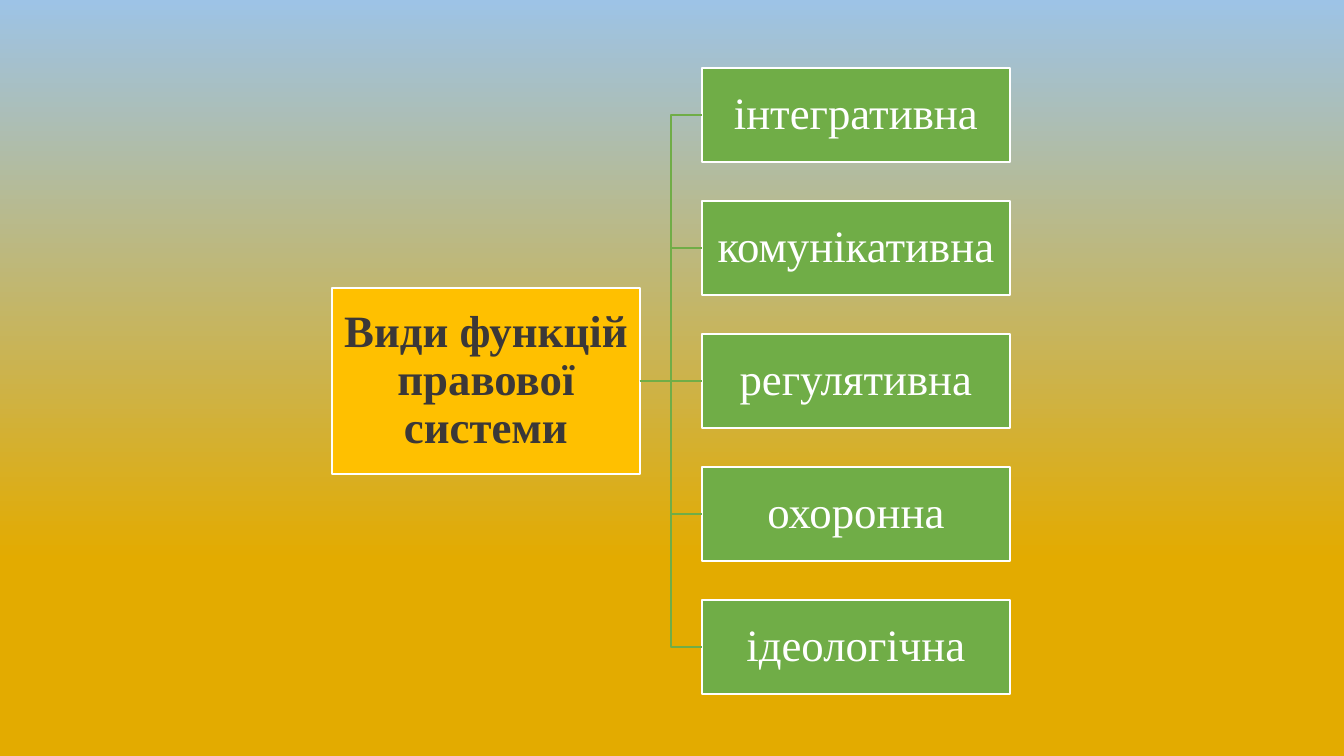
from lxml import etree
from pptx import Presentation
from pptx.dml.color import RGBColor
from pptx.enum.shapes import MSO_CONNECTOR, MSO_SHAPE
from pptx.enum.text import MSO_ANCHOR, PP_ALIGN
from pptx.oxml.ns import qn
from pptx.util import Pt

RECT = MSO_SHAPE.RECTANGLE
ELBOW, STRAIGHT = MSO_CONNECTOR.ELBOW, MSO_CONNECTOR.STRAIGHT
MIDDLE, CENTER = MSO_ANCHOR.MIDDLE, PP_ALIGN.CENTER
LEFT_SIDE, RIGHT_SIDE = 1, 3

WHITE = RGBColor(0xFF, 0xFF, 0xFF)
DARK = RGBColor(0x3B, 0x38, 0x38)
AMBER = RGBColor(0xFF, 0xC0, 0x00)
GREEN = RGBColor(0x70, 0xAD, 0x47)
GOLD = RGBColor(0xE3, 0xAB, 0x00)
SKY = RGBColor(0x9D, 0xC3, 0xE6)

ROOT = "Види функцій правової системи"
FUNCTIONS = ["інтегративна", "комунікативна", "регулятивна", "охоронна", "ідеологічна"]


def px(n):
    return round(n * 914400 / 100.8)


class Diagram:
    font = {"name": "Times New Roman", "size": Pt(32)}
    frame = {"word_wrap": True, "vertical_anchor": MIDDLE,
             "margin_left": px(2), "margin_right": px(2),
             "margin_top": px(2), "margin_bottom": px(2)}
    line_width = Pt(1)

    def __init__(self, slide):
        self.s = slide

    def background(self, stops, angle):
        fill = self.s.background.fill
        fill.gradient()
        fill.gradient_angle = angle
        for stop, (position, color) in zip(fill.gradient_stops, stops):
            stop.position = position
            stop.color.rgb = color

    def box(self, x, y, w, h, text, fill, color, bold=False):
        sp = self.s.shapes.add_shape(RECT, px(x), px(y), px(w), px(h))
        sp.shadow.inherit = False
        sp.fill.solid()
        sp.fill.fore_color.rgb = fill
        sp.line.color.rgb = WHITE
        sp.line.width = self.line_width
        tf = sp.text_frame
        for name, value in self.frame.items():
            setattr(tf, name, value)
        p = tf.paragraphs[0]
        p.alignment = CENTER
        p.line_spacing = 0.9
        r = p.add_run()
        r.text = text
        for name, value in {**self.font, "bold": bold}.items():
            setattr(r.font, name, value)
        r.font.color.rgb = color
        return sp

    def link(self, kind, parent, child, color):
        c = self.s.shapes.add_connector(kind, 0, 0, 0, 0)
        c.begin_connect(parent, RIGHT_SIDE)
        c.end_connect(child, LEFT_SIDE)
        c.line.color.rgb = color
        c.line.width = self.line_width
        etree.SubElement(c._element.spPr, qn("a:effectLst"))


def main():
    prs = Presentation()
    prs.slide_width, prs.slide_height = px(1344), px(756)
    d = Diagram(prs.slides.add_slide(prs.slide_layouts[6]))
    d.background([(0.26, GOLD), (1, SKY)], 90)

    # Root box, centred on the column of functions
    axis, width, root_height = 381, 308, 186
    root = d.box(332, axis - root_height // 2, width, root_height, ROOT, AMBER, DARK, True)

    # Functions at an equal pitch, each joined to the root
    height, pitch, middle = 94, 133, len(FUNCTIONS) // 2
    for i, name in enumerate(FUNCTIONS):
        y = axis + (i - middle) * pitch - height // 2
        child = d.box(702, y, width, height, name, GREEN, WHITE)
        d.link(STRAIGHT if i == middle else ELBOW, root, child, GREEN)

    prs.save("out.pptx")


if __name__ == "__main__":
    main()
